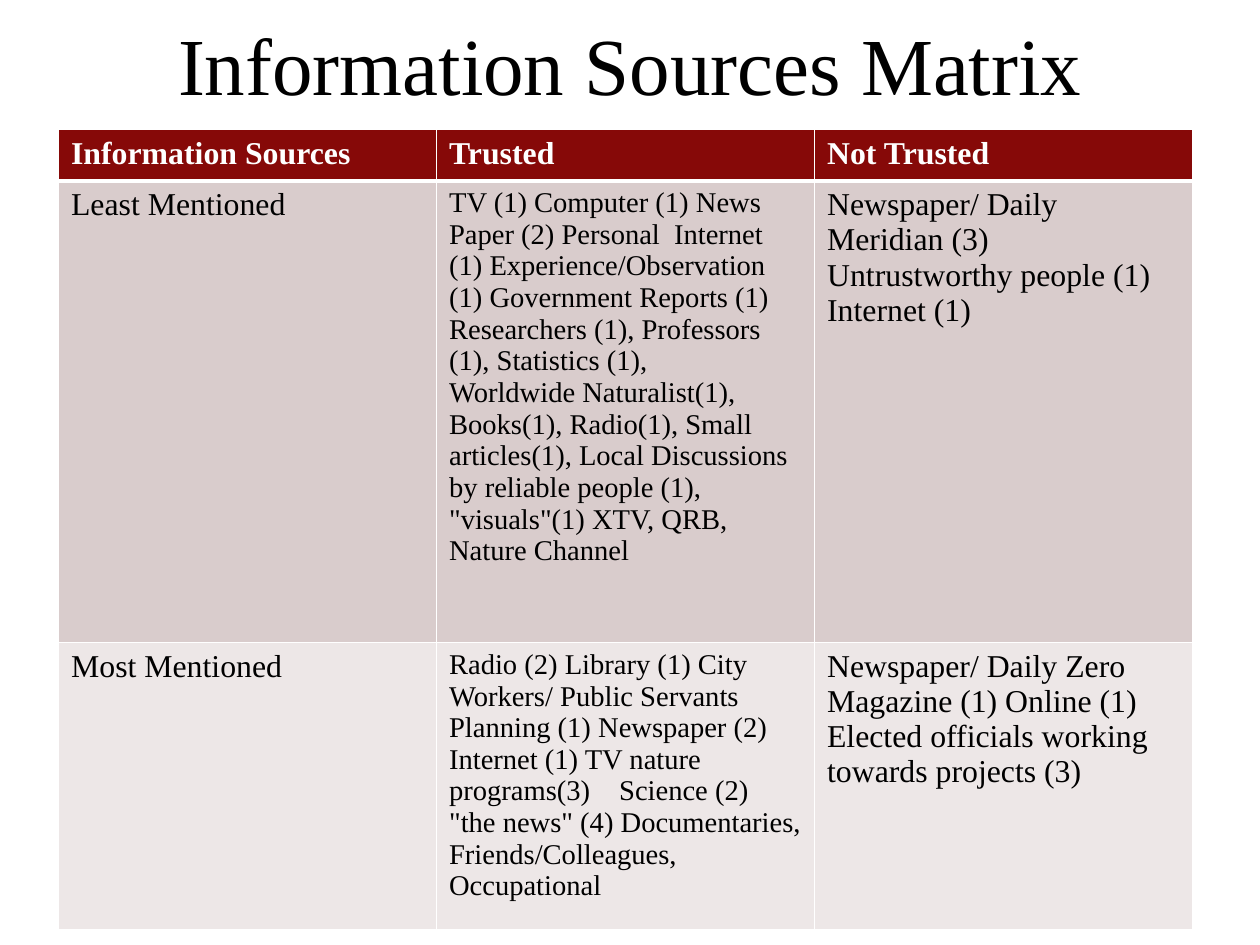
from dataclasses import dataclass

import pptx
import pptx.dml.color
import pptx.enum.text
import pptx.oxml
import pptx.oxml.ns
import pptx.util
from pptx.util import Cm


@dataclass(frozen=True)
class Theme:
    font: str = "Times New Roman"
    text: str = "000000"
    light: str = "FFFFFF"
    header: str = "860908"
    bands: tuple = ("D9CCCC", "EDE7E7")
    title_size: int = 51
    body_size: int = 20
    detail_size: int = 18
    thin: int = 1
    thick: int = 3


def rgb(value):
    return pptx.dml.color.RGBColor.from_string(value)


def element(tag, attributes="", content=""):
    namespace = pptx.oxml.ns.nsdecls("a")
    return pptx.oxml.parse_xml(f"<a:{tag} {namespace} {attributes}>{content}</a:{tag}>")


class SlideBuilder:
    def __init__(self, slide, theme):
        self.slide = slide
        self.theme = theme

    def fill_text(self, text_frame, text, size, color, bold=False, alignment=None, tab=None):
        text_frame.word_wrap = True
        text_frame.text = text
        for paragraph in text_frame.paragraphs:
            if tab:
                stop = f'<a:tab pos="{tab}" algn="l"/>'
                paragraph._p.get_or_add_pPr().append(element("tabLst", content=stop))
            paragraph.alignment = alignment
            font = paragraph.font
            font.name = self.theme.font
            font.size = pptx.util.Pt(size)
            font.bold = bold
            font.color.rgb = rgb(color)

    def set_insets(self, frame):
        frame.margin_left = frame.margin_right = Cm(0.28)
        frame.margin_top = frame.margin_bottom = Cm(0.14)

    def title(self, text, left, top, width, height):
        text_frame = self.slide.shapes.add_textbox(left, top, width, height).text_frame
        self.set_insets(text_frame)
        text_frame.vertical_anchor = pptx.enum.text.MSO_ANCHOR.MIDDLE
        self.fill_text(text_frame, text, self.theme.title_size, self.theme.text,
                       alignment=pptx.enum.text.PP_ALIGN.CENTER)

    def set_borders(self, cell, top, bottom):
        thin = self.theme.thin
        properties = cell._tc.get_or_add_tcPr()
        color = f'<a:solidFill><a:srgbClr val="{self.theme.light}"/></a:solidFill>'
        sides = (("lnL", thin), ("lnR", thin), ("lnT", top), ("lnB", bottom))
        for index, (tag, width) in enumerate(sides):
            line = element(tag, f'w="{pptx.util.Pt(width)}"', color)
            properties.insert(index, line)

    def table(self, rows, tabs, left, top, column_width, row_heights):
        theme = self.theme
        column_count = len(rows[0])
        table = self.slide.shapes.add_table(
            len(rows), column_count, left, top,
            column_width * column_count, sum(row_heights)).table
        for column in table.columns:
            column.width = column_width
        for row_index, texts in enumerate(rows):
            table.rows[row_index].height = row_heights[row_index]
            is_header = row_index == 0
            fill = theme.header if is_header else theme.bands[row_index - 1]
            for column_index, text in enumerate(texts):
                cell = table.cell(row_index, column_index)
                is_detail = column_index == 1 and not is_header
                self.set_insets(cell)
                self.fill_text(
                    cell.text_frame, text,
                    theme.detail_size if is_detail else theme.body_size,
                    theme.light if is_header else theme.text,
                    bold=is_header, tab=tabs[row_index] if is_detail else None)
                cell.fill.solid()
                cell.fill.fore_color.rgb = rgb(fill)
                self.set_borders(
                    cell,
                    theme.thick if row_index == 1 else theme.thin,
                    theme.thick if is_header else theme.thin)


MATRIX = (
    ("Information Sources", "Trusted", "Not Trusted"),
    (
        "Least Mentioned",
        "TV (1) Computer (1) News Paper (2) Personal\tInternet (1) "
        "Experience/Observation (1) Government Reports (1) Researchers (1), "
        "Professors (1), Statistics (1),\vWorldwide Naturalist(1), Books(1), "
        "Radio(1), Small articles(1), Local Discussions by reliable people (1), "
        '"visuals"(1) XTV, QRB, Nature Channel',
        "Newspaper/ Daily Meridian (3) Untrustworthy people (1)\nInternet (1)",
    ),
    (
        "Most Mentioned",
        "Radio (2) Library (1) City Workers/ Public Servants Planning (1) "
        "Newspaper (2) Internet (1) TV nature programs(3)\tScience (2)\v"
        '"the news" (4) Documentaries, Friends/Colleagues, Occupational',
        "Newspaper/ Daily Zero\n"
        "Magazine (1) Online (1) Elected officials working towards projects (3)",
    ),
)


def main():
    presentation = pptx.Presentation()
    presentation.slide_width = Cm(28)
    presentation.slide_height = Cm(21)
    slide = presentation.slides.add_slide(presentation.slide_layouts[6])
    builder = SlideBuilder(slide, Theme())
    builder.title("Information Sources Matrix", Cm(1.4), Cm(0), Cm(25.2), Cm(2.8))
    builder.table(MATRIX, (None, Cm(5), Cm(3.78)), Cm(1.3), Cm(2.88), Cm(8.4),
                  (Cm(1.14), Cm(10.26), Cm(6.38)))
    presentation.save("out.pptx")


if __name__ == "__main__":
    main()
